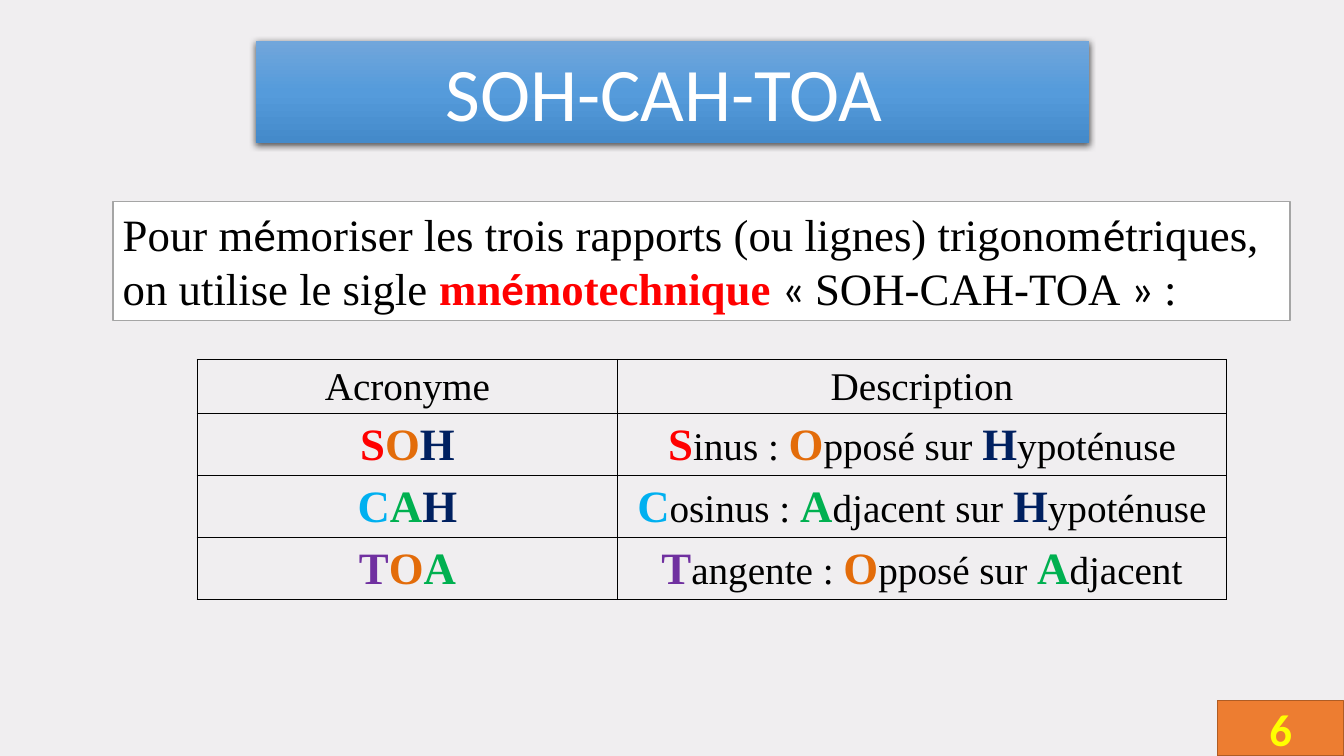
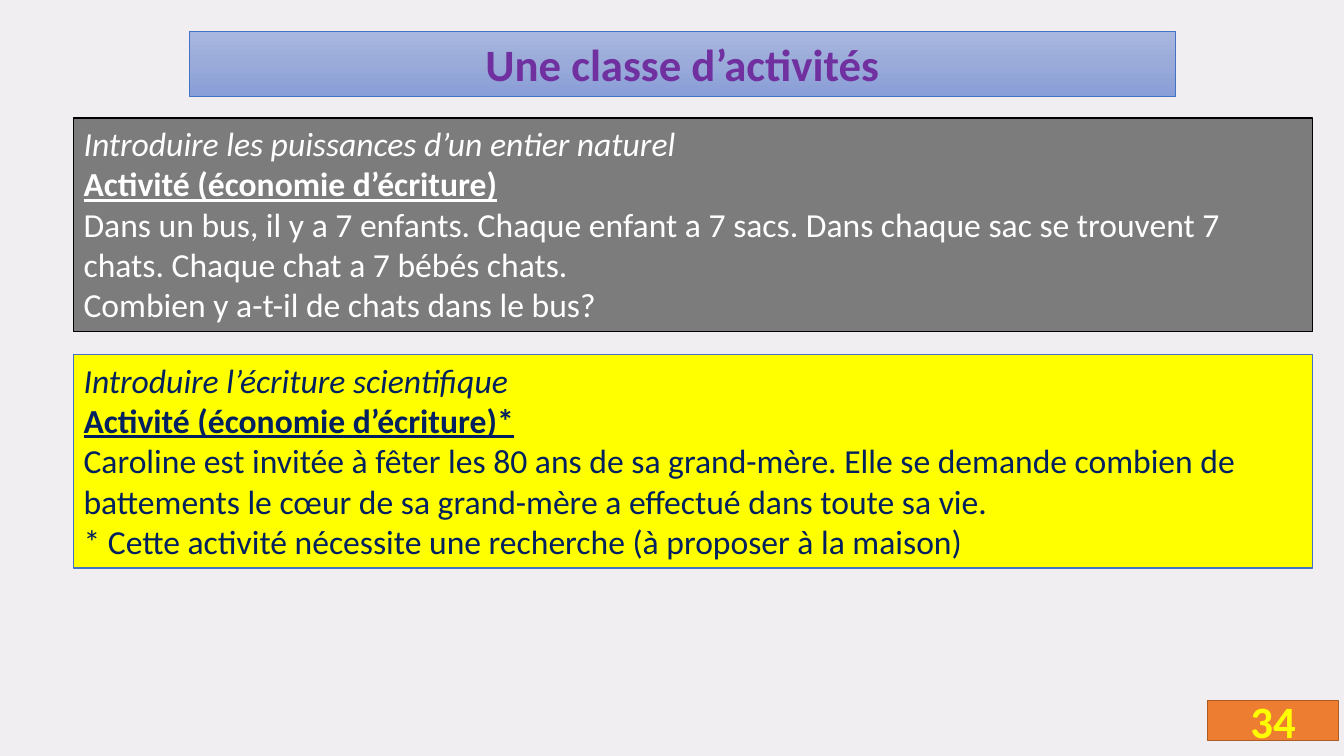
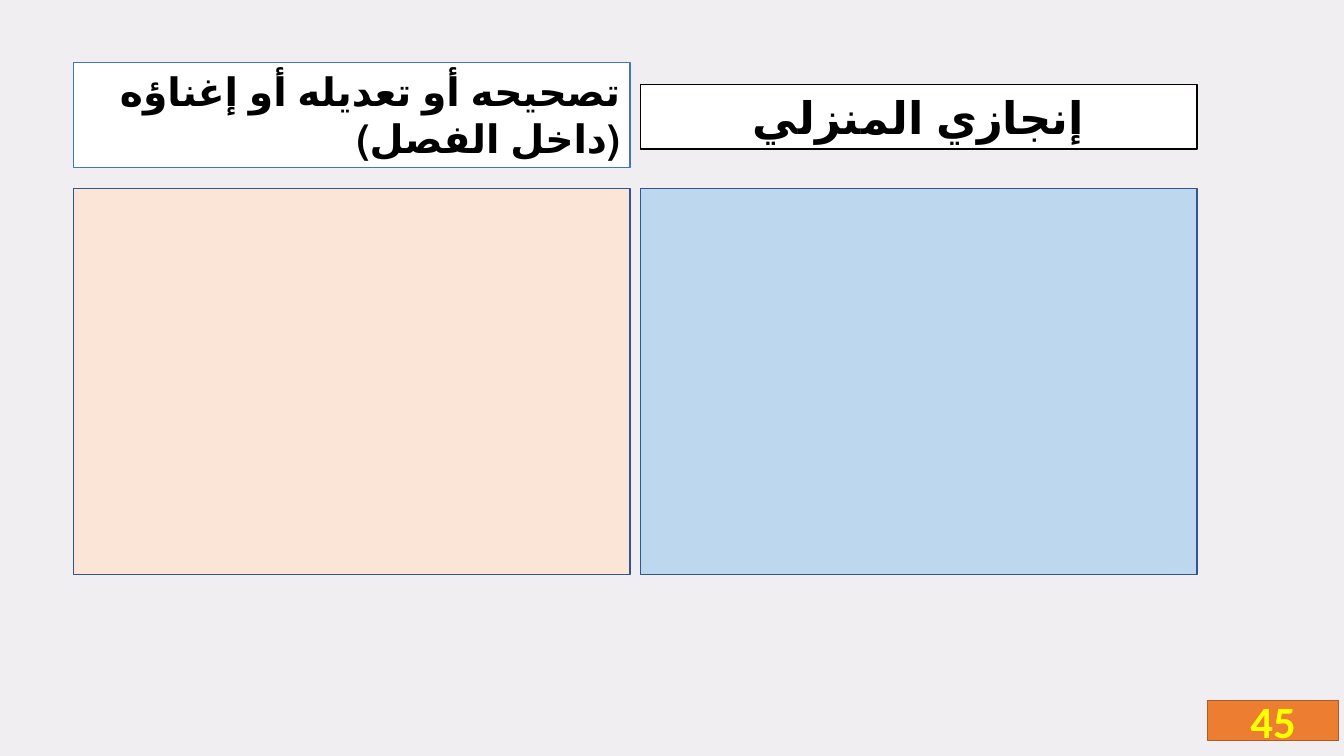
from copy import deepcopy
from dataclasses import dataclass
from itertools import groupby

from lxml import etree
from pptx import Presentation
from pptx.dml.color import RGBColor
from pptx.enum.shapes import MSO_SHAPE
from pptx.enum.text import MSO_ANCHOR, MSO_AUTO_SIZE, PP_ALIGN
from pptx.oxml.ns import qn
from pptx.util import Pt

RECT = MSO_SHAPE.RECTANGLE
TOP, MIDDLE = MSO_ANCHOR.TOP, MSO_ANCHOR.MIDDLE
LEFT, CENTER, RIGHT = PP_ALIGN.LEFT, PP_ALIGN.CENTER, PP_ALIGN.RIGHT
FIT = MSO_AUTO_SIZE.SHAPE_TO_FIT_TEXT


@dataclass(frozen=True)
class Theme:
    sans: str = "Calibri"
    serif: str = "Times New Roman"
    # Type sizes
    huge: int = 54
    large: int = 32
    mid: int = 28
    body: int = 24
    # Colours
    back: str = "F0EEF0"
    black: str = "000000"
    white: str = "FFFFFF"
    red: str = "FF0000"
    navy: str = "002060"
    purple: str = "7030A0"
    yellow: str = "FFFF00"
    gray: str = "7C7C7C"
    silver: str = "A5A5A5"
    blue: str = "4472C4"
    edge: str = "325491"
    sky: str = "BDD7EE"
    peach: str = "FBE5D6"
    orange: str = "ED7D31"
    rust: str = "AF5C24"
    steel: str = "3A5274"
    azure: tuple = ("71A6DB", "559BDB", "448ACA")
    lilac: tuple = ("A8B7DF", "9AABD9", "889ED7")


T = Theme()
HUES = {"S": T.red, "O": "E36C0A", "H": T.navy,
        "C": "00B0F0", "A": "00B050", "T": T.purple}
MARGIN = 52.6


def rgb(code):
    return RGBColor.from_string(code)


# XML helpers
def node(root, tag, **attrs):
    child = etree.SubElement(root, qn(tag))
    for name, value in attrs.items():
        child.set(name, str(value))
    return child


def stroke(root, tag, color, width=1):
    line = node(root, tag, w=Pt(width))
    node(node(line, "a:solidFill"), "a:srgbClr", val=color)
    return line


# Text
def put(par, text, size=T.body, font=T.sans, color=T.black, bold=False,
        italic=False, under=False, outline=None, rtl=False, lang=None):
    run = par.add_run()
    run.text = text
    face = run.font
    face.name, face.size = font, Pt(size)
    face.bold, face.italic, face.underline = bold, italic, under
    face.color.rgb = rgb(color)
    props = run._r.get_or_add_rPr()
    if outline:
        props.insert(0, stroke(props, "a:ln", outline))
    if rtl:
        par._p.get_or_add_pPr().set("rtl", "1")
    if lang:
        props.set("lang", lang)


def put_mixed(par, text, **style):
    """Switch between the serif and the sans font at each bar."""
    for index, part in enumerate(text.split("|")):
        if part:
            put(par, part, size=T.large,
                font=T.sans if index % 2 else T.serif, **style)


def put_keys(par, text):
    """Make the key letters large, bold and coloured."""
    for hue, chars in groupby(text, HUES.get):
        put(par, "".join(chars), font=T.serif, color=hue or T.black,
            size=T.large if hue else T.mid, bold=bool(hue))


# Shapes
def blend(shape, colors):
    fill = shape.fill
    fill.gradient()
    fill.gradient_angle = 270
    stop = shape._element.spPr.find(".//" + qn("a:gs"))
    stop.addnext(deepcopy(stop))
    for index, (stop, color) in enumerate(zip(fill.gradient_stops, colors)):
        stop.color.rgb = rgb(color)
        stop.position = index / 2


def box(slide, left, top, width, height, fill, line=None, weight=1,
        anchor=TOP, fit=True):
    shape = slide.shapes.add_shape(
        RECT, Pt(left), Pt(top), Pt(width), Pt(height))
    shape.shadow.inherit = False
    if isinstance(fill, tuple):
        blend(shape, fill)
    else:
        shape.fill.solid()
        shape.fill.fore_color.rgb = rgb(fill)
    if line:
        shape.line.color.rgb = rgb(line)
        shape.line.width = Pt(weight)
    else:
        shape.line.fill.background()
    frame = shape.text_frame
    frame.vertical_anchor = anchor
    if fit:
        frame.auto_size = FIT
    return shape


def label(shape, text, align=CENTER, **style):
    par = shape.text_frame.paragraphs[0]
    par.alignment = align
    put(par, text, **style)


def shade(shape):
    effects = shape._element.spPr.find(qn("a:effectLst"))
    shadow = node(effects, "a:outerShdw", blurRad=Pt(4.5), dist=Pt(1.5),
                  dir=90 * 60000, algn="ctr", rotWithShape=0)
    color = node(shadow, "a:srgbClr", val=T.black)
    node(color, "a:alpha", val=63000)


def badge(slide, number, left=862.6, width=93.6, height=28.8):
    shape = box(slide, left, 500.4, width, height, T.orange, T.rust,
                anchor=MIDDLE, fit=False)
    label(shape, number, size=T.large, color=T.yellow, bold=True,
          outline=T.steel)


def task(slide, top, fill, line, color, lines):
    """Box with an italic aim, an underlined heading and plain text."""
    frame = box(slide, MARGIN, top, 884.9, 152.6, fill, line).text_frame
    for index, text in enumerate(lines):
        par = frame.paragraphs[0] if index == 0 else frame.add_paragraph()
        par.alignment = LEFT
        put(par, text, color=color, italic=index == 0,
            bold=index == 1, under=index == 1)


# Table
def grid(slide, left, top, widths, heights, rows):
    table = slide.shapes.add_table(
        len(rows), len(widths), Pt(left), Pt(top),
        Pt(sum(widths)), Pt(sum(heights))).table
    table.first_row = table.horz_banding = False
    for col, width in zip(table.columns, widths):
        col.width = Pt(width)
    for r, texts in enumerate(rows):
        table.rows[r].height = Pt(heights[r])
        for c, text in enumerate(texts):
            cell = table.cell(r, c)
            cell.margin_left = cell.margin_right = Pt(5)
            cell.margin_top = cell.margin_bottom = 0
            for side in "LRTB":
                stroke(cell._tc.get_or_add_tcPr(), "a:ln" + side, T.black)
            cell.fill.background()
            par = cell.text_frame.paragraphs[0]
            par.alignment, par.line_spacing = CENTER, 1.15
            if r:
                put_keys(par, text)
            else:
                put(par, text, size=T.mid, font=T.serif)


# Slides
def sigle(slide):
    badge(slide, "6", left=869.8, width=90, height=39.6)
    title = box(slide, 182.9, 29.2, 595.2, 72.7, T.azure)
    shade(title)
    label(title, "SOH-CAH-TOA ", size=T.huge, color=T.white)
    grid(slide, 140.9, 256.7, (300.2, 434.9), (38.5, 44.3, 44.3, 44.3), (
        ("Acronyme", "Description"),
        ("SOH", "Sinus : Opposé sur Hypoténuse"),
        ("CAH", "Cosinus : Adjacent sur Hypoténuse"),
        ("TOA", "Tangente : Opposé sur Adjacent")))
    frame = box(slide, 80.6, 143.8, 841, 85, T.white, T.silver,
                anchor=MIDDLE).text_frame
    first, second = frame.paragraphs[0], frame.add_paragraph()
    first.alignment = second.alignment = LEFT
    put_mixed(first, "Pour m|é|moriser les trois rapports (ou lignes) "
                     "trigonom|é|triques,")
    put_mixed(second, "on utilise le sigle ")
    put_mixed(second, "mn|é|motechnique ", color=T.red, bold=True)
    put_mixed(second, "|« |SOH-CAH-TOA| » |:")


def classe(slide):
    badge(slide, "34")
    title = box(slide, 135, 22.5, 704.9, 46.1, T.lilac, T.blue, 0.5)
    label(title, "Une classe d’activités", size=T.large, color=T.purple,
          bold=True, rtl=True)
    task(slide, 84.2, T.gray, T.black, T.white, (
        "Introduire les puissances d’un entier naturel",
        "Activité (économie d’écriture)",
        "Dans un bus, il y a 7 enfants. Chaque enfant a 7 sacs. Dans chaque "
        "sac se trouvent 7 chats. Chaque chat a 7 bébés chats.",
        "Combien y a-t-il de chats dans le bus?"))
    task(slide, 253.2, T.yellow, T.blue, T.navy, (
        "Introduire l’écriture scientifique",
        "Activité (économie d’écriture)*",
        "Caroline est invitée à fêter les 80 ans de sa grand-mère. Elle se "
        "demande combien de battements le cœur de sa grand-mère a effectué "
        "dans toute sa vie.",
        "* Cette activité nécessite une recherche (à proposer à la maison)"))


def work(slide):
    badge(slide, "45")
    width, gap = 397.6, 7.2
    panes = (
        (1, "إنجازي المنزلي", 60.5, 46.1, T.large, CENTER, T.black, T.sky),
        (0, "تصحيحه أو تعديله أو إغناؤه (داخل الفصل)", 44.8, 74.9, T.mid,
         RIGHT, T.blue, T.peach))
    for col, text, top, height, size, align, line, fill in panes:
        left = MARGIN + col * (width + gap)
        head = box(slide, left, top, width, height, T.white, line)
        label(head, text, align, size=size, bold=True, rtl=True,
              lang="ar-MA")
        box(slide, left, 134.8, width, 275.8, fill, T.edge, fit=False)


def main():
    deck = Presentation()
    deck.slide_width, deck.slide_height = Pt(960), Pt(540)
    for build in (sigle, classe, work):
        slide = deck.slides.add_slide(deck.slide_layouts[6])
        slide.background.fill.solid()
        slide.background.fill.fore_color.rgb = rgb(T.back)
        build(slide)
    deck.save("out.pptx")


if __name__ == "__main__":
    main()
